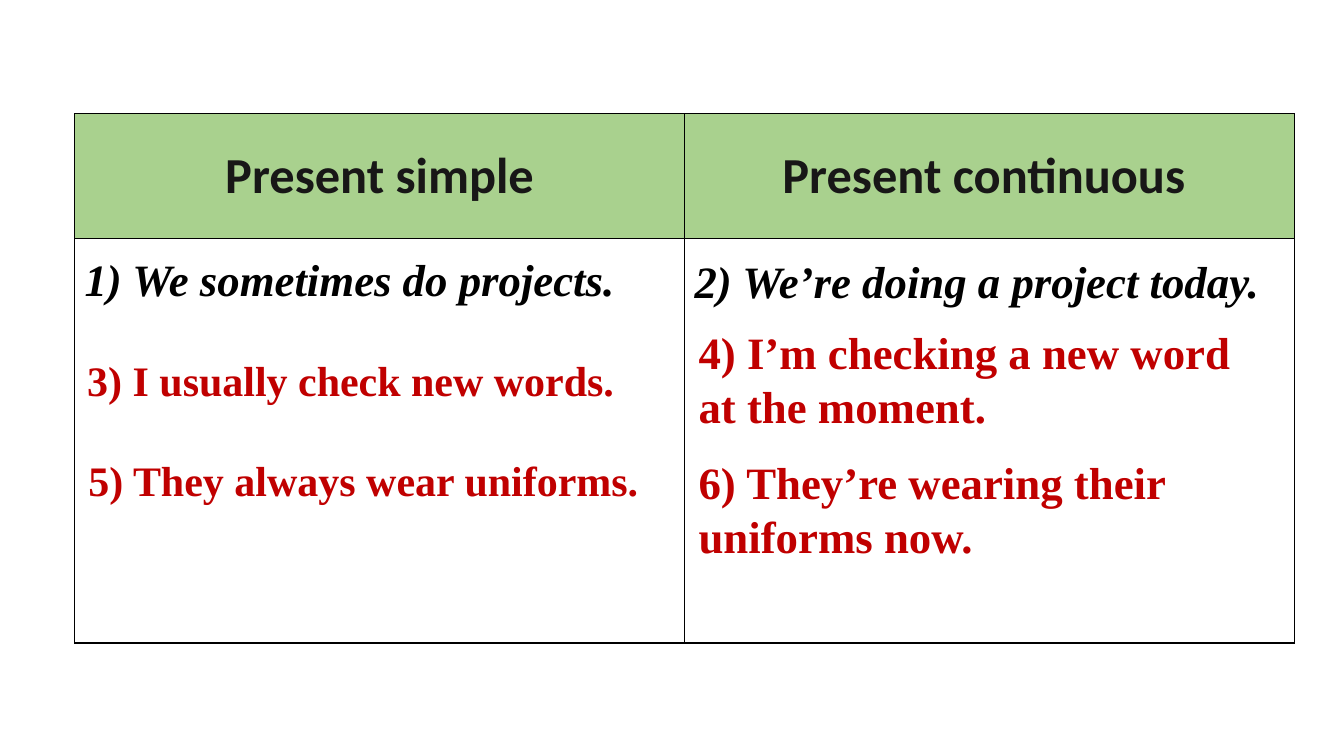
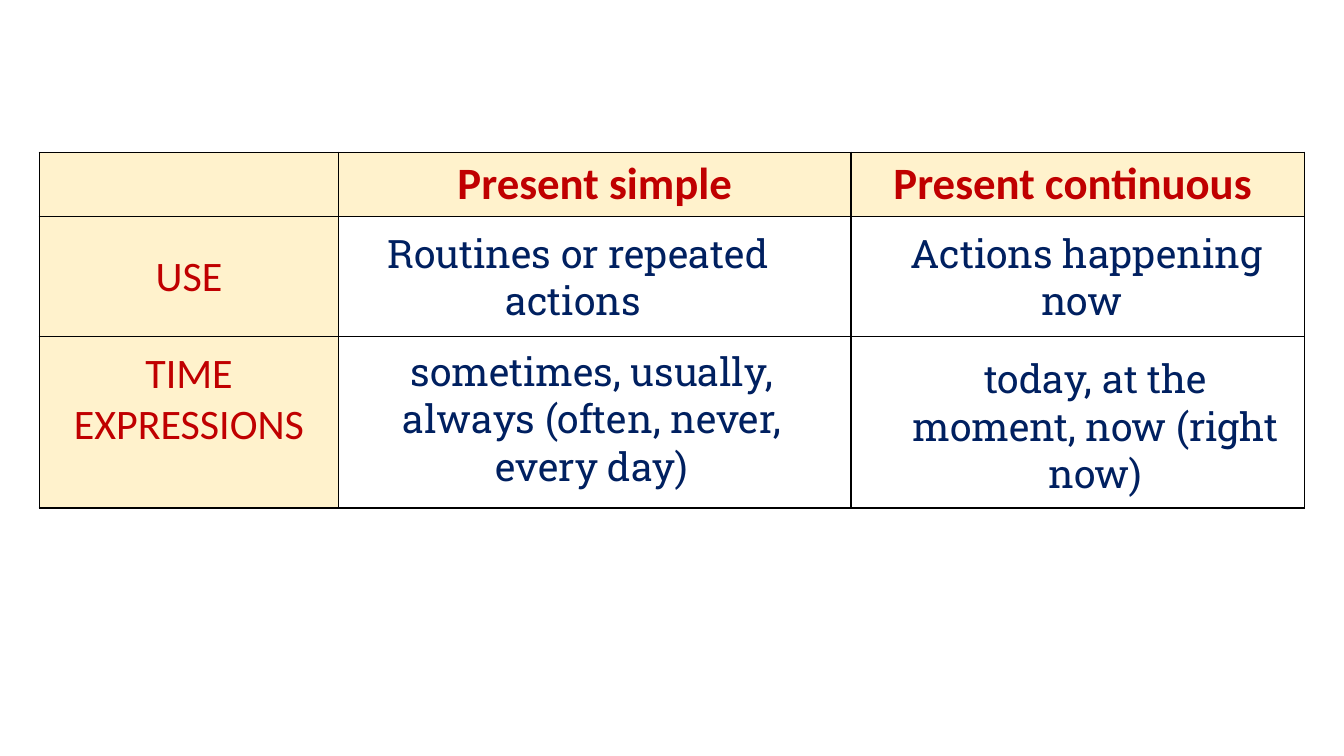
from lxml.etree import SubElement
from pptx import Presentation
from pptx.dml.color import RGBColor
from pptx.enum.text import MSO_ANCHOR as Anchor, PP_ALIGN as Align
from pptx.oxml.ns import qn
from pptx.util import Inches, Pt

BLACK, INK, RED, NAVY = "000000", "181717", "C00000", "002060"
GREEN, CREAM, WHITE = "A9D18E", "FFF2CC", "FFFFFF"

HEADER = dict(font="Calibri", size=36, color=INK, bold=True, align=Align.CENTER)
RED_HEADER = dict(HEADER, size=32, color=RED)
ROW_LABEL = dict(RED_HEADER, size=30, bold=False)
ANSWER = dict(font="Times New Roman", size=32, color=RED, bold=True)
SHORT_ANSWER = dict(ANSWER, size=30, align=Align.CENTER)
EXAMPLE = dict(ANSWER, color=BLACK, italic=True)
RULE = dict(font="Roboto Slab", size=28, color=NAVY, align=Align.CENTER)

SLIDES = [
    dict(
        at=(0.74, 1.13), cols=[6.05, 6.05], rows=[1.24, 4.01], fill=GREEN,
        cells={(0, 0): ("Present simple", HEADER),
               (0, 1): ("Present continuous ", HEADER)},
        label_column=False,
        texts=[
            ("3) I usually check new words.", (0.52, 3.47, 5.92, 0.61), SHORT_ANSWER),
            ("5) They always wear uniforms.", (0.6, 4.46, 6.01, 0.61), SHORT_ANSWER),
            ("4) I’m checking a new word at the moment.", (6.83, 3.17, 5.76, 1.18), ANSWER),
            ("1) We sometimes do projects.", (0.74, 2.45, 6.71, 0.64), EXAMPLE),
            ("2) We’re doing a project today.", (6.79, 2.47, 6.88, 0.64), EXAMPLE),
            ("6) They’re wearing their uniforms now.", (6.83, 4.46, 6.12, 1.18), ANSWER),
        ],
    ),
    dict(
        at=(0.39, 1.51), cols=[2.97, 5.08, 4.5], rows=[0.64, 1.19, 1.7], fill=CREAM,
        cells={(0, 1): ("Present simple", RED_HEADER),
               (0, 2): ("Present continuous ", RED_HEADER),
               (1, 0): ("USE", ROW_LABEL),
               (2, 0): ("TIME EXPRESSIONS", dict(ROW_LABEL, bottom=0.5))},
        label_column=True,
        texts=[
            ("Routines or repeated actions ", (3.13, 2.23, 5.21, 1.04), RULE),
            ("Actions happening now ", (8.72, 2.23, 4.11, 1.04), RULE),
            ("sometimes, usually, always (often, never, every day)",
             (3.75, 3.4, 4.24, 1.51), RULE),
            ("today, at the moment, now (right now)", (8.9, 3.47, 3.93, 1.51), RULE),
        ],
    ),
]


def rgb(value):
    return RGBColor.from_string(value)


def write(tf, text, font, size, color, bold=False, italic=False, align=Align.LEFT):
    p = tf.paragraphs[0]
    p.text, p.alignment = text, align
    p.font.name, p.font.size = font, Pt(size)
    p.font.bold, p.font.italic = bold, italic
    p.font.color.rgb = rgb(color)


def add_borders(cell):
    tcPr = cell._tc.get_or_add_tcPr()
    for i, side in enumerate(("lnL", "lnR", "lnT", "lnB")):
        ln = tcPr.makeelement(qn(f"a:{side}"), {"w": str(Pt(1))})
        SubElement(SubElement(ln, qn("a:solidFill")), qn("a:srgbClr"), val=BLACK)
        tcPr.insert(i, ln)


def add_grid(slide, at, cols, rows, fill, cells, label_column):
    x, y = at
    table = slide.shapes.add_table(
        len(rows), len(cols), Inches(x), Inches(y),
        Inches(sum(cols)), Inches(sum(rows))).table
    table.horz_banding = False
    for col, width in zip(table.columns, cols):
        col.width = Inches(width)
    for row, height in zip(table.rows, rows):
        row.height = Inches(height)
    for r in range(len(rows)):
        for c in range(len(cols)):
            cell = table.cell(r, c)
            shaded = r == 0 or (label_column and c == 0)
            cell.fill.solid()
            cell.fill.fore_color.rgb = rgb(fill if shaded else WHITE)
            add_borders(cell)
            if (r, c) in cells:
                text, style = cells[r, c]
                style = dict(style)
                cell.vertical_anchor = Anchor.MIDDLE
                cell.margin_bottom = Inches(style.pop("bottom", 0.05))
                write(cell.text_frame, text, **style)


def add_text(slide, text, box, style):
    tf = slide.shapes.add_textbox(*map(Inches, box)).text_frame
    tf.word_wrap = True
    write(tf, text, **style)


def main():
    prs = Presentation()
    prs.slide_width, prs.slide_height = Inches(13.33), Inches(7.5)
    for content in SLIDES:
        slide = prs.slides.add_slide(prs.slide_layouts[6])
        grid = {key: value for key, value in content.items() if key != "texts"}
        add_grid(slide, **grid)
        for text, box, style in content["texts"]:
            add_text(slide, text, box, style)
    prs.save("out.pptx")


if __name__ == "__main__":
    main()
